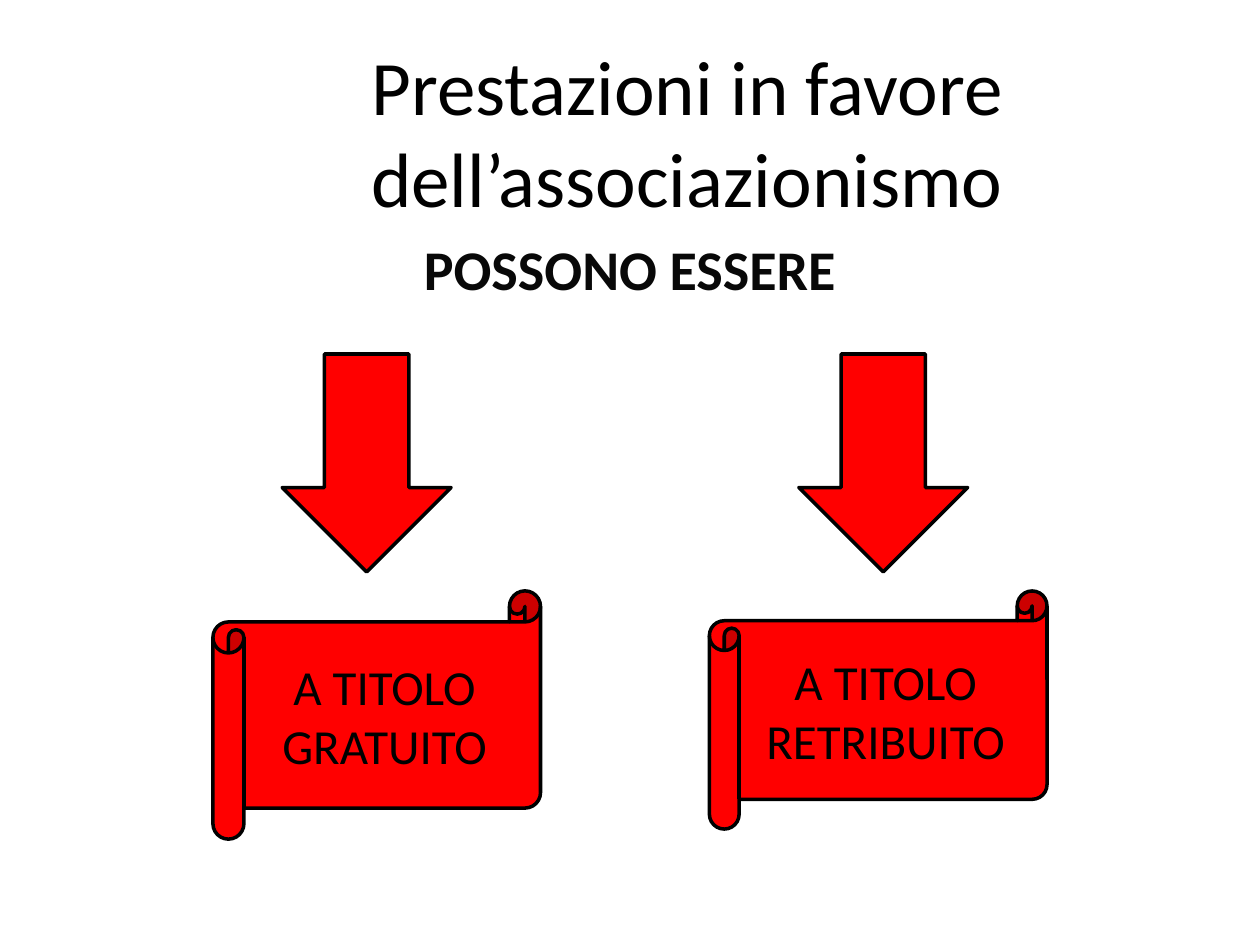
from dataclasses import dataclass

from pptx import Presentation
from pptx import util as u
from pptx.dml.color import RGBColor
from pptx.enum import shapes, text


@dataclass(frozen=True)
class Theme:
    font: str = "Calibri"
    black: RGBColor = RGBColor(0, 0, 0)
    soft_black: RGBColor = RGBColor(8, 8, 8)
    red: RGBColor = RGBColor(255, 0, 0)
    title_size: int = 44
    subtitle_size: int = 32
    label_size: int = 28
    line_width: int = 2


THEME = Theme()


def inches(box):
    return [u.Inches(length) for length in box]


def write(frame, wording, size, color=THEME.black, bold=False):
    """Put one centred run, wrapped and vertically centred, in the frame."""
    frame.word_wrap = True
    frame.vertical_anchor = text.MSO_ANCHOR.MIDDLE
    paragraph = frame.paragraphs[0]
    paragraph.alignment = text.PP_ALIGN.CENTER
    run = paragraph.add_run()
    run.text = wording
    run.font.name = THEME.font
    run.font.size = u.Pt(size)
    run.font.bold = bold
    run.font.color.rgb = color


def add_heading(slide, box, wording, size, top_inset=0, **style):
    frame = slide.shapes.add_textbox(*inches(box)).text_frame
    frame.margin_left = frame.margin_right = frame.margin_bottom = 0
    frame.margin_top = u.Inches(top_inset)
    write(frame, wording, size, **style)


def add_red_shape(slide, kind, box):
    shape = slide.shapes.add_shape(kind, *inches(box))
    shape.shadow.inherit = False
    shape.fill.solid()
    shape.fill.fore_color.rgb = THEME.red
    shape.line.color.rgb = THEME.black
    shape.line.width = u.Pt(THEME.line_width)
    return shape


def add_option(slide, arrow_box, scroll_box, wording):
    """Place a down arrow and the labelled scroll it points to."""
    add_red_shape(slide, shapes.MSO_SHAPE.DOWN_ARROW, arrow_box)
    scroll = add_red_shape(slide, shapes.MSO_SHAPE.HORIZONTAL_SCROLL, scroll_box)
    write(scroll.text_frame, wording, THEME.label_size)


def main():
    presentation = Presentation()
    presentation.slide_width = u.Inches(10)
    presentation.slide_height = u.Inches(7.5)
    slide = presentation.slides.add_slide(presentation.slide_layouts[6])

    add_heading(slide, (3.35, 1.86, 3.3, 0.54), "POSSONO ESSERE",
                THEME.subtitle_size, color=THEME.soft_black, bold=True)
    add_heading(slide, (1.14, 0, 8.63, 1.78),
                "Prestazioni in favore dell’associazionismo",
                THEME.title_size, top_inset=0.29)

    options = [
        (2.24, (1.69, 4.69, 2.6, 1.97), "A TITOLO GRATUITO"),
        (6.34, (5.63, 4.69, 2.68, 1.89), "A TITOLO RETRIBUITO"),
    ]
    for arrow_left, scroll_box, wording in options:
        add_option(slide, (arrow_left, 2.81, 1.34, 1.73), scroll_box, wording)

    presentation.save("out.pptx")


if __name__ == "__main__":
    main()
